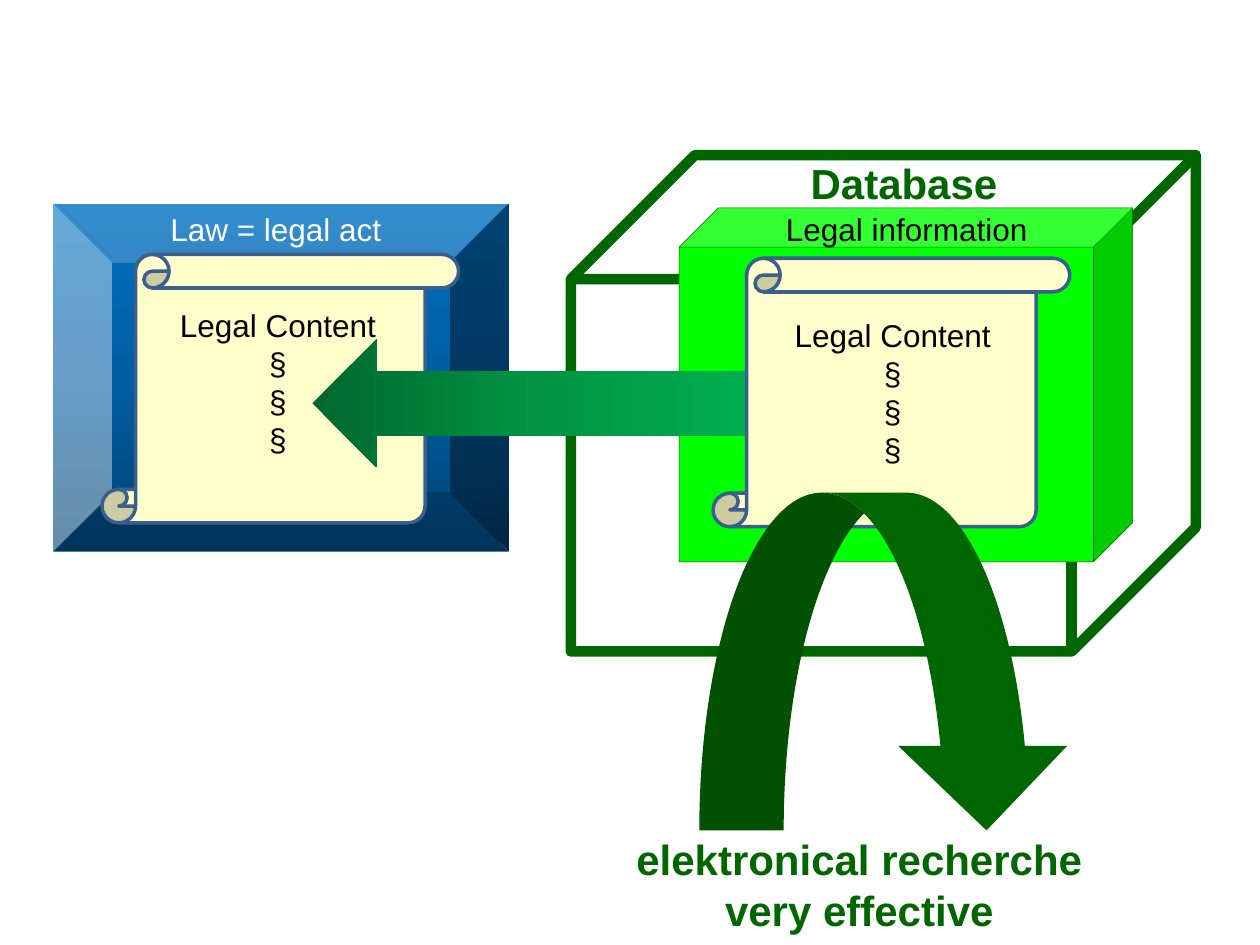
"""Builds a slide relating a legal act to legal information held in a database."""
from copy import deepcopy

from pptx import Presentation
from pptx.dml.color import RGBColor
from pptx.enum.shapes import MSO_SHAPE
from pptx.enum.text import MSO_AUTO_SIZE, PP_ALIGN
from pptx.util import Pt

GREEN = RGBColor(0x00, 0x66, 0x00)
LIME = RGBColor(0x00, 0xFF, 0x00)
CREAM = RGBColor(0xFF, 0xFF, 0xCC)
STEEL = RGBColor(0x3A, 0x5F, 0x8C)
BLACK = RGBColor(0x00, 0x00, 0x00)
WHITE = RGBColor(0xFF, 0xFF, 0xFF)
BLUES = [RGBColor(0x00, 0x42, 0x72), RGBColor(0x00, 0x5E, 0xA2), RGBColor(0x00, 0x70, 0xC0)]
GREENS = [RGBColor(0x00, 0x68, 0x2F), RGBColor(0x00, 0x94, 0x43), RGBColor(0x00, 0xB0, 0x50)]

CONTENT = ["Legal Content", "§", "§", "§"]
SCROLL = dict(fill=CREAM, line=STEEL, width=2)
HEADING = dict(size=24, color=GREEN, bold=True)

prs = Presentation()
prs.slide_width, prs.slide_height = Pt(720), Pt(540)
s = prs.slides.add_slide(prs.slide_layouts[6])


def add_text(lines, box, size=18, color=BLACK, bold=False):
    tb = s.shapes.add_textbox(*map(Pt, box))
    tf = tb.text_frame
    tf.word_wrap = True
    tf.auto_size = MSO_AUTO_SIZE.SHAPE_TO_FIT_TEXT
    for i, line in enumerate(lines):
        p = tf.add_paragraph() if i else tf.paragraphs[0]
        p.alignment = PP_ALIGN.CENTER
        r = p.add_run()
        r.text = line
        r.font.name, r.font.size = "Arial", Pt(size)
        r.font.bold, r.font.color.rgb = bold, color


def fill_gradient(sp, colors):
    sp.fill.gradient()
    sp.fill.gradient_angle = 90
    stops = sp._element.spPr.find(".//{*}gsLst")
    stops.append(deepcopy(stops[-1]))
    for i, (stop, color) in enumerate(zip(sp.fill.gradient_stops, colors)):
        stop.position = i / (len(colors) - 1)
        stop.color.rgb = color


def add_shape(kind, box, fill=None, line=None, width=0, adj=None, rotation=0):
    sp = s.shapes.add_shape(kind, *map(Pt, box))
    sp.shadow.inherit = False
    sp.rotation = rotation
    if adj is not None:
        sp.adjustments[0] = adj
    if isinstance(fill, list):
        fill_gradient(sp, fill)
    elif fill is not None:
        sp.fill.solid()
        sp.fill.fore_color.rgb = fill
    else:
        sp.fill.background()
    if line is not None:
        sp.line.color.rgb, sp.line.width = line, Pt(width)
    else:
        sp.line.fill.background()


add_shape(MSO_SHAPE.CUBE, (326.2, 88.6, 357.1, 283.7), line=GREEN, width=6)
add_shape(MSO_SHAPE.BEVEL, (30.2, 116.6, 260.6, 198.7), fill=BLUES, adj=0.169)
add_shape(MSO_SHAPE.VERTICAL_SCROLL, (58.3, 145.4, 203.8, 153.4), **SCROLL)
add_text(CONTENT, (85, 171.4, 147.6, 94.3))
add_text(["Law = legal act"], (30.2, 116.6, 254.9, 28.8), color=WHITE)
add_shape(MSO_SHAPE.CUBE, (388.1, 118.8, 259.2, 202.3), fill=LIME, line=GREEN, width=0.25, adj=0.111)
add_text(["Legal information"], (413.3, 116.6, 209.5, 28.8))
add_shape(MSO_SHAPE.DOWN_ARROW, (269.3, 103, 73.4, 254.9), fill=GREENS, rotation=90)
add_text(["Database"], (411.8, 86.4, 209.5, 36), **HEADING)
add_text(["elektronical recherche", "very effective"], (262.1, 473, 457.9, 65.5), **HEADING)
add_shape(MSO_SHAPE.VERTICAL_SCROLL, (407.5, 147.6, 203.8, 153.4), **SCROLL)
add_text(CONTENT, (436.3, 177.1, 147.6, 94.3))
add_shape(MSO_SHAPE.CURVED_DOWN_ARROW, (399.6, 281.5, 212.4, 193), fill=GREEN)

prs.save("out.pptx")
